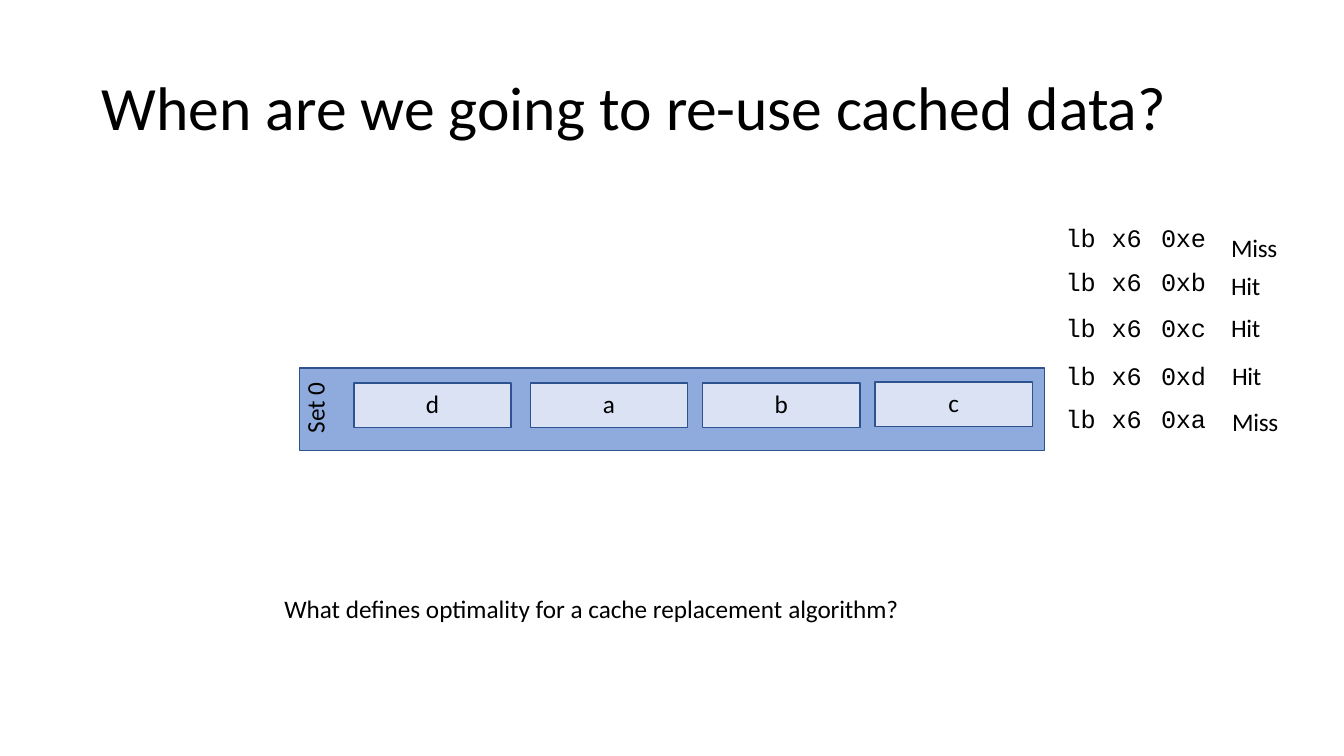
from pptx import Presentation
from pptx.dml.color import RGBColor
from pptx.enum.shapes import MSO_SHAPE as Shape
from pptx.enum.text import MSO_ANCHOR as Anchor, PP_ALIGN as Align
from pptx.util import Inches, Pt


def color(value):
    return RGBColor.from_string(value)


def write(holder, *pieces, size=18, font="Calibri", align=Align.LEFT,
          indent=0, before=0, line=None, top=0.01):
    """Add a paragraph of (text, letter spacing in points) pieces to a shape or cell."""
    frame = holder.text_frame
    frame.word_wrap = True
    box = holder if hasattr(holder, "margin_left") else frame
    box.margin_left = box.margin_right = box.margin_bottom = 0
    box.margin_top = Inches(top)
    box.vertical_anchor = Anchor.TOP
    paragraph = frame.add_paragraph() if frame.text else frame.paragraphs[0]
    paragraph.alignment = align
    paragraph.space_before = Pt(before)
    if line:
        paragraph.line_spacing = line
    paragraph._p.get_or_add_pPr().set("marL", str(Inches(indent)))
    for text, spacing in pieces:
        run = paragraph.add_run()
        run.text = text
        run.font.size = Pt(size)
        run.font.name = font
        run.font.color.rgb = color("000000")
        run._r.get_or_add_rPr().set("spc", str(round(spacing * 100)))


presentation = Presentation()
presentation.slide_width = Inches(13.33)
presentation.slide_height = Inches(7.5)
slide = presentation.slides.add_slide(presentation.slide_layouts[6])
shapes = slide.shapes

# Load instructions
loads = [  # address, row height, top inset, space before, line spacing
    ("0xe", 0.4, 0, 0, Pt(21.1)),
    ("0xb", 0.45, 0.04, 3, None),
    ("0xc", 0.47, 0.05, 3.3, None),
    ("0xd", 0.45, 0.06, 4, None),
    ("0xa", 0.39, 0.03, 1.9, None),
]
table = shapes.add_table(len(loads), 3, Inches(10.54), Inches(2.24),
                         Inches(1.42), Inches(2.16)).table
table.first_row = table.horz_banding = False
for column, width in zip(table.columns, (0.41, 0.45, 0.56)):
    column.width = Inches(width)
for row, (address, height, top, before, line) in zip(table.rows, loads):
    row.height = Inches(height)
    words = [("lb", Align.LEFT, 0.03), ("x6", Align.CENTER, 0), (address, Align.RIGHT, 0)]
    for cell, (word, align, indent) in zip(row.cells, words):
        cell.fill.background()
        write(cell, (word, -0.2), font="Courier New", align=align,
              indent=indent, before=before, line=line, top=top)

# Title
title = shapes.add_textbox(Inches(0.19), Inches(0.67), Inches(12.95), Inches(0.76))
write(title, ("When are we going to ", 0), ("re-", -0.5), ("use cached ", 0),
      ("data?", -0.1), size=44, indent=0.82, before=1.1)

# Cache set and its four blocks
blocks = [
    ("Set 0", 2.97, 3.65, 7.39, 0.82, "8FAADC"),
    ("d", 3.51, 3.8, 1.56, 0.44, "DAE2F3"),
    ("a", 5.26, 3.8, 1.56, 0.44, "DAE2F3"),
    ("b", 6.97, 3.8, 1.56, 0.44, "DAE2F3"),
    ("c", 8.68, 3.79, 1.56, 0.44, "DAE2F3"),
]
for label, left, top, width, height, fill in blocks:
    block = shapes.add_shape(Shape.RECTANGLE, Inches(left), Inches(top),
                             Inches(width), Inches(height))
    block.shadow.inherit = False
    block.fill.solid()
    block.fill.fore_color.rgb = color(fill)
    block.line.color.rgb = color("2E528F")
    block.line.width = Pt(1)
    if label == "Set 0":
        write(block, ("Set ", 0), ("0", -0.5), indent=0.17, before=0.7)
        block.text_frame._txBody.bodyPr.set("vert", "vert270")
    else:
        write(block, (label, 0), align=Align.CENTER, before=3.9, top=0.05)

# Outcomes of the loads, wrapped to one word a line
upper = shapes.add_textbox(Inches(12.2), Inches(2.21), Inches(0.49), Inches(1.21))
write(upper, ("Miss Hit", -0.2), indent=0.01, before=1, line=1.27)
write(upper, ("Hit", -0.2), indent=0.01, before=8.5)
lower = shapes.add_textbox(Inches(12.2), Inches(3.41), Inches(0.5), Inches(0.94))
write(lower, ("Hit Miss", -0.2), indent=0.02, before=1, line=1.52)

# Question
question = shapes.add_textbox(Inches(2.81), Inches(5.88), Inches(6.14), Inches(0.33))
write(question, ("What defines optimality for a cache replacement ", 0),
      ("algorithm?", -0.1), indent=0.01, before=1)

presentation.save("out.pptx")
